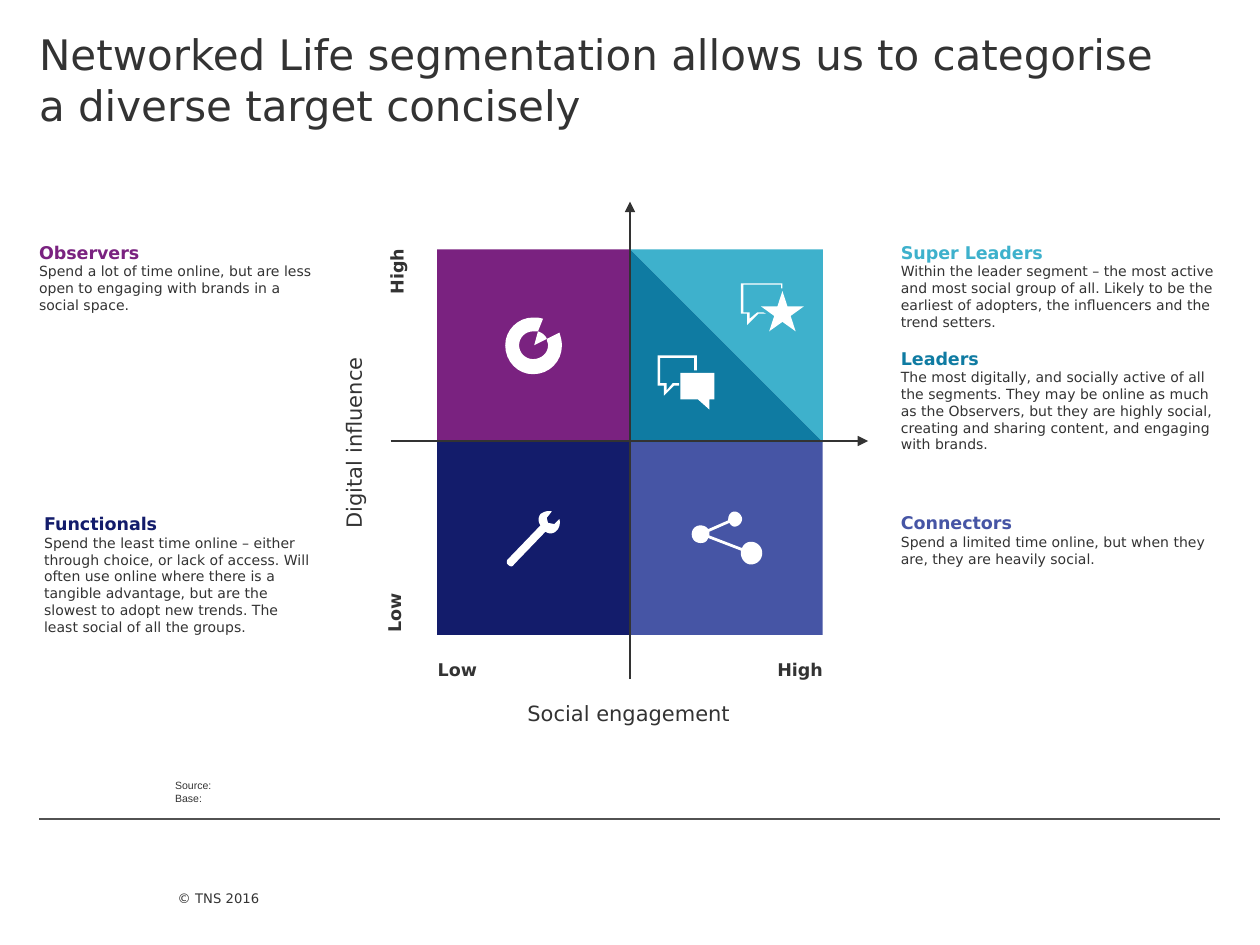
from lxml.etree import SubElement
from pptx import Presentation
from pptx.dml.color import RGBColor
from pptx.enum.shapes import MSO_CONNECTOR, MSO_SHAPE as SHAPE
from pptx.enum.text import MSO_ANCHOR as ANCHOR, MSO_AUTO_SIZE as AUTO, PP_ALIGN as ALIGN
from pptx.oxml.ns import qn
from pptx.util import Inches, Pt

INK = RGBColor(0x33, 0x33, 0x33)
RULE = RGBColor(0x52, 0x52, 0x52)
WHITE = RGBColor(0xFF, 0xFF, 0xFF)
PURPLE = RGBColor(0x7A, 0x22, 0x80)
NAVY = RGBColor(0x13, 0x1C, 0x6B)
INDIGO = RGBColor(0x46, 0x55, 0xA5)
TEAL = RGBColor(0x0F, 0x7B, 0xA2)
AQUA = RGBColor(0x3E, 0xB1, 0xCC)

# The slide is a grid of 100 columns by 75 rows; all lengths below are in cells
CELL = Inches(0.1)
COLUMNS, ROWS = 100, 75

deck = Presentation()
deck.slide_width, deck.slide_height = COLUMNS * CELL, ROWS * CELL
slide = deck.slides.add_slide(deck.slide_layouts[5])
shapes = slide.shapes


def grid(*cells):
    return [round(cell * CELL) for cell in cells]


def write(frame, text, size=8, color=INK, bold=False, font="DejaVu Sans", align=ALIGN.LEFT,
          anchor=ANCHOR.TOP, wrap=True, grow=True, margins=(0, 0, 0, 0)):
    """Add one paragraph to a text frame; margins are left, top, right, bottom."""
    frame.word_wrap, frame.vertical_anchor = wrap, anchor
    frame.auto_size = AUTO.SHAPE_TO_FIT_TEXT if grow else AUTO.NONE
    (frame.margin_left, frame.margin_top,
     frame.margin_right, frame.margin_bottom) = grid(*margins)
    para = frame.paragraphs[0] if not frame.text else frame.add_paragraph()
    para.text, para.alignment = text, align
    for span in para.runs:
        span.font.name, span.font.size, span.font.bold = font, Pt(size), bold
        span.font.color.rgb = color


# Title
title = shapes.title
title.left, title.top, title.width, title.height = grid(3.1, 0, 93.7, 11.3)
write(title.text_frame, "Networked Life segmentation allows us to categorise\va diverse target concisely",
      size=24, grow=False, margins=(0, 2.3, 0, 0))

# Copyright line
box = shapes.add_textbox(*grid(14.1, 69.2, 27.8, 5.8))
write(box.text_frame, "© TNS 2016", size=7.5, anchor=ANCHOR.BOTTOM, grow=False,
      margins=(0, 0, 0, 3.1))

# Segment descriptions
segments = [
    ("Observers", PURPLE, (3.1, 19.2, 21.9, 5.7), ANCHOR.TOP,
     "Spend a lot of time online, but are less open to engaging with brands in a social space."),
    ("Leaders", TEAL, (71.5, 27.6, 25.6, 8.4), ANCHOR.TOP,
     "The most digitally, and socially active of all the segments. They may be online as much as "
     "the Observers, but they are highly social, creating and sharing content, and engaging with "
     "brands."),
    ("Super Leaders", AQUA, (71.5, 19.2, 27, 7.1), ANCHOR.TOP,
     "Within the leader segment – the most active and most social group of all. Likely to be the "
     "earliest of adopters, the influencers and the trend setters."),
    ("Functionals", NAVY, (3.5, 40.6, 21.5, 9.8), ANCHOR.BOTTOM,
     "Spend the least time online – either through choice, or lack of access. Will often use "
     "online where there is a tangible advantage, but are the slowest to adopt new trends. The "
     "least social of all the groups."),
    ("Connectors", INDIGO, (71.5, 40.6, 25.4, 4.4), ANCHOR.BOTTOM,
     "Spend a limited time online, but when they are, they are heavily social."),
]
for name, color, place, anchor, description in segments:
    frame = shapes.add_textbox(*grid(*place)).text_frame
    write(frame, name, size=10, color=color, bold=True, anchor=anchor)
    write(frame, description, anchor=anchor)

# Source and base table
table = shapes.add_table(2, 1, *grid(13.7, 61.9, 83.2, 2)).table
table.first_row = table.horz_banding = False
for row, label in zip(table.rows, ("Source:", "Base:")):
    row.height = CELL
    cell = row.cells[0]
    cell.fill.background()
    cell.vertical_anchor = ANCHOR.MIDDLE
    cell.margin_left, cell.margin_top, cell.margin_right, cell.margin_bottom = grid(0.2, 0, 0.2, 0)
    span = cell.text_frame.paragraphs[0].add_run()
    span.text = label
    span.font.name, span.font.size, span.font.color.rgb = "Arial", Pt(6), INK

# Axis labels, in boxes with room to keep each on one line
axis_labels = [
    ("Low", (29.1, 47.8, 4.4, 1.7), 270, 10, True),
    ("High", (29.3, 20.7, 4.4, 1.7), 270, 10, True),
    ("Digital influence", (19.1, 34.1, 18, 2.1), 270, 12, False),
    ("Low", (34.1, 52.3, 4.4, 1.7), 0, 10, True),
    ("High", (61.3, 52.3, 4.4, 1.7), 0, 10, True),
    ("Social engagement", (40, 55.6, 19.8, 2.1), 0, 12, False),
]
for label, place, turn, size, bold in axis_labels:
    box = shapes.add_textbox(*grid(*place))
    box.rotation = turn
    write(box.text_frame, label, size=size, bold=bold, align=ALIGN.CENTER, wrap=False, grow=False)

# Quadrants, with the top right one split into two triangles, and the star
LEFT, TOP, SIDE = 34.7, 19.8, 15.3
MIDDLE, CENTER = LEFT + SIDE, TOP + SIDE
filled = [
    (SHAPE.RECTANGLE, (LEFT, TOP, SIDE, SIDE), 0, PURPLE),
    (SHAPE.RECTANGLE, (LEFT, CENTER, SIDE, SIDE), 0, NAVY),
    (SHAPE.RECTANGLE, (MIDDLE, CENTER, SIDE, SIDE), 0, INDIGO),
    (SHAPE.RIGHT_TRIANGLE, (MIDDLE, TOP, SIDE, SIDE), 180, AQUA),
    (SHAPE.RIGHT_TRIANGLE, (MIDDLE, TOP, SIDE, SIDE), 0, TEAL),
    (SHAPE.STAR_5_POINT, (60.4, 23.1, 3.4, 3.2), 0, WHITE),
]
for kind, place, turn, color in filled:
    shape = shapes.add_shape(kind, *grid(*place))
    shape.rotation = turn
    shape.shadow.inherit = False
    shape.fill.solid()
    shape.fill.fore_color.rgb = color
    shape.line.fill.background()

# Icon outlines: a pair is a corner, six numbers are a cubic curve (two handles and its end)
wrench = [(40.8, 44.8), (43.3, 42.2), (43.6, 42.4, 43.9, 42.4, 44.2, 42.1),
          (44.4, 41.9, 44.5, 41.5, 44.4, 41.2), (44, 41.6), (43.5, 41.5), (43.4, 41.1),
          (43.8, 40.6), (43.5, 40.5, 43.2, 40.6, 42.9, 40.8), (42.7, 41.1, 42.7, 41.4, 42.9, 41.7),
          (40.3, 44.4), (40.2, 44.5, 40.2, 44.7, 40.3, 44.8), (40.5, 45, 40.7, 45, 40.8, 44.8)]
wedge = [(43.4, 26.9), (43.3, 26.6, 43, 26.4, 42.7, 26.3), (42.4, 27.4)]
ring = [(44.4, 26.4), (43.4, 26.9), (43.4, 27.1, 43.5, 27.2, 43.5, 27.4),
        (43.5, 28, 43, 28.5, 42.3, 28.5), (41.7, 28.5, 41.2, 28, 41.2, 27.4),
        (41.2, 26.8, 41.7, 26.3, 42.3, 26.3), (42.5, 26.3, 42.6, 26.3, 42.7, 26.3), (43.1, 25.3),
        (42.8, 25.2, 42.6, 25.2, 42.3, 25.2), (41.1, 25.2, 40.1, 26.2, 40.1, 27.4),
        (40.1, 28.7, 41.1, 29.7, 42.3, 29.7), (43.6, 29.7, 44.6, 28.7, 44.6, 27.4),
        (44.6, 27.1, 44.5, 26.7, 44.4, 26.4)]
network = [(60.5, 43.9), (60.5, 44.4, 60.1, 44.8, 59.6, 44.8), (59.2, 44.8, 58.8, 44.4, 58.8, 43.9),
           (58.8, 43.7), (56.2, 42.7), (56.1, 43, 55.9, 43.1, 55.6, 43.1),
           (55.2, 43.1, 54.9, 42.8, 54.9, 42.4), (54.9, 42, 55.2, 41.7, 55.6, 41.7),
           (55.8, 41.7, 56.1, 41.8, 56.2, 42), (57.8, 41.3), (57.8, 41.2),
           (57.8, 40.9, 58, 40.6, 58.3, 40.6), (58.6, 40.6, 58.9, 40.9, 58.9, 41.2),
           (58.9, 41.5, 58.6, 41.8, 58.3, 41.8), (58.2, 41.8, 58, 41.7, 57.9, 41.5), (56.3, 42.2),
           (56.3, 42.5), (58.9, 43.5), (59, 43.2, 59.3, 43, 59.6, 43),
           (60.1, 43, 60.5, 43.4, 60.5, 43.9)]
open_bubble = [(55.3, 28.2), (55.3, 29.4), (55.1, 29.4), (55.1, 28.4), (52.4, 28.4), (52.4, 30.4),
               (52.9, 30.4), (52.9, 31), (53.4, 30.4), (53.9, 30.4), (53.9, 30.6), (53.5, 30.6),
               (52.7, 31.4), (52.7, 30.6), (52.2, 30.6), (52.2, 28.2)]
solid_bubble = [(54, 29.6), (54, 31.7), (55.4, 31.7), (56.3, 32.5), (56.3, 31.7), (56.7, 31.7),
                (56.7, 29.6)]
star_bubble = [(60.1, 24.8), (59.5, 25.3), (59.5, 24.8), (59, 24.8), (59, 22.6), (62, 22.6),
               (62, 22.9), (62.1, 22.9), (62.1, 22.5), (58.8, 22.5), (58.8, 24.9), (59.3, 24.9),
               (59.3, 25.8), (60.2, 24.9), (60.8, 24.9), (60.6, 24.8)]
STEPS = 8
for outline in (wrench, wedge, ring, network, open_bubble, solid_bubble, star_bubble):
    points = [outline[0]]
    for part in outline[1:]:
        if len(part) == 2:
            points.append(part)
            continue
        ends = [points[-1], part[:2], part[2:4], part[4:]]
        for step in range(1, STEPS + 1):
            t = step / STEPS
            weights = ((1 - t) ** 3, 3 * t * (1 - t) ** 2, 3 * t ** 2 * (1 - t), t ** 3)
            points.append(tuple(sum(w * end[axis] for w, end in zip(weights, ends))
                                for axis in (0, 1)))
    builder = shapes.build_freeform(*grid(*points[0]))
    builder.add_line_segments([grid(*point) for point in points[1:]], close=True)
    icon = builder.convert_to_shape()
    icon.shadow.inherit = False
    icon.fill.solid()
    icon.fill.fore_color.rgb = WHITE
    icon.line.fill.background()

# Footer rule and the two axis arrows
lines = [((3.1, 65, 96.8, 65), RULE, 0.75, False),
         ((31, 35, 68.9, 35), INK, 1.5, True),
         ((50, 53.9, 50, 16), INK, 1.5, True)]
for ends, color, width, arrow in lines:
    line = shapes.add_connector(MSO_CONNECTOR.STRAIGHT, *grid(*ends))
    line.line.color.rgb, line.line.width = color, Pt(width)
    properties = line._element.spPr
    if arrow:
        SubElement(properties.find(qn("a:ln")), qn("a:tailEnd"), type="triangle")
    SubElement(properties, qn("a:effectLst"))

deck.save("out.pptx")
